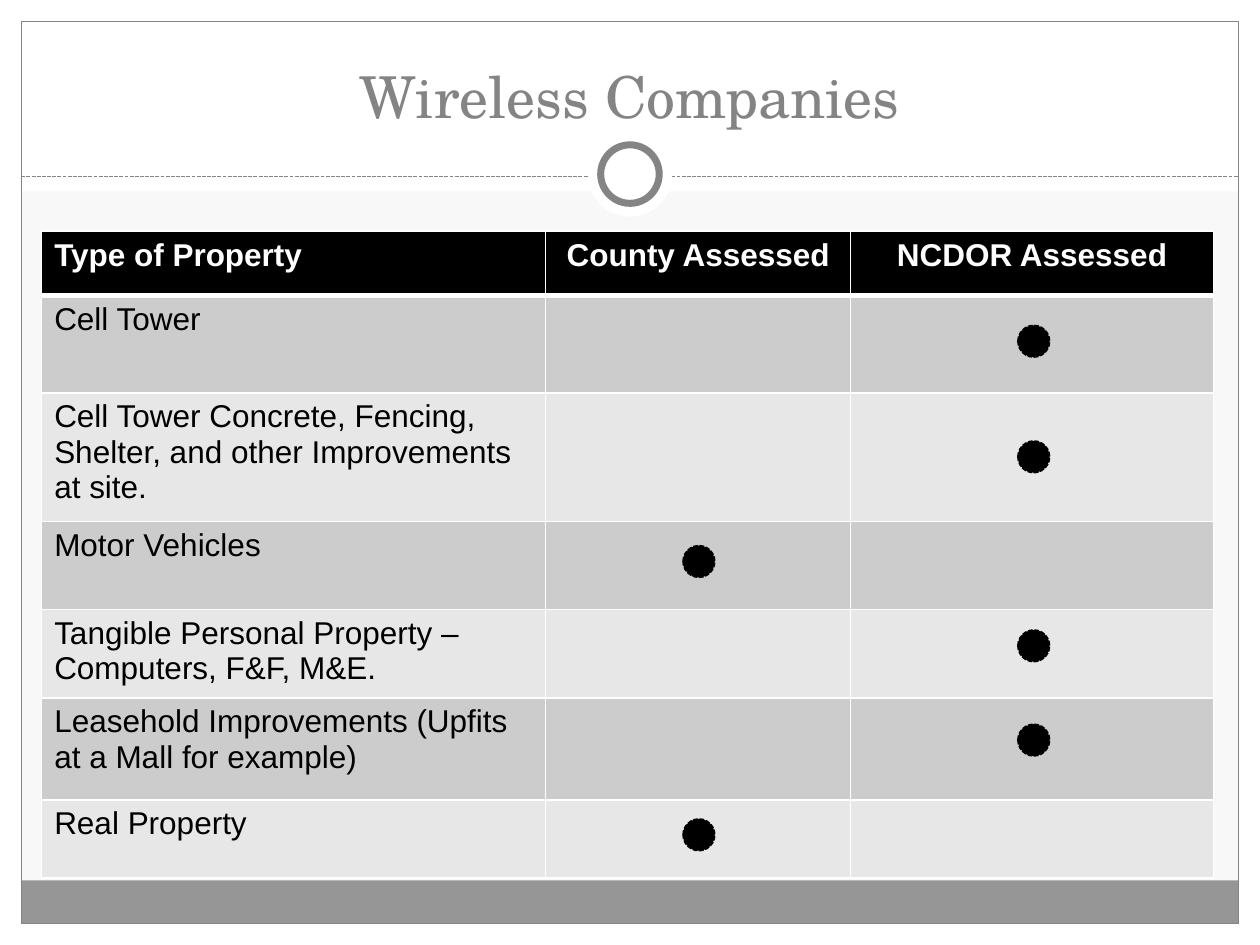
"""Builds the slide on who assesses the property of wireless companies."""
from dataclasses import dataclass

from lxml import etree
from pptx import Presentation
from pptx import util as u
from pptx.dml.color import RGBColor
from pptx.enum import dml, shapes, text
from pptx.oxml.ns import qn


@dataclass(frozen=True)
class Theme:
    back: str = "F8F8F8"
    white: str = "FFFFFF"
    black: str = "000000"
    grey: str = "848484"
    footer: str = "969696"
    bands: tuple = ("CCCCCC", "E7E7E7")
    title_font: str = "TeX Gyre Schola"
    body_font: str = "Arial"
    title_size: int = 33
    body_size: int = 18


class Deck:
    def __init__(self, prs, theme):
        self.theme = theme
        self.s = prs.slides.add_slide(prs.slide_layouts[6])
        fill = self.s.background.fill
        fill.solid()
        fill.fore_color.rgb = RGBColor.from_string(theme.back)

    def style_line(self, line, color, width, dash=None):
        line.color.rgb = RGBColor.from_string(color)
        line.width = u.Pt(width)
        if dash:
            line.dash_style = dash

    def style_text(self, p, font, size, color, bold=False, align=None):
        p.font.name, p.font.size, p.font.bold = font, u.Pt(size), bold
        p.font.color.rgb = RGBColor.from_string(color)
        p.alignment = align

    def shape(self, kind, box, fill=None, line=None, width=0.75, dash=None):
        sp = self.s.shapes.add_shape(kind, *map(u.Cm, box))
        sp.shadow.inherit = False
        if fill:
            sp.fill.solid()
            sp.fill.fore_color.rgb = RGBColor.from_string(fill)
        else:
            sp.fill.background()
        if line:
            self.style_line(sp.line, line, width, dash)
        else:
            sp.line.fill.background()

    def rule(self, x1, x2, y):
        cn = self.s.shapes.add_connector(
            shapes.MSO_CONNECTOR.STRAIGHT, *map(u.Cm, (x1, y, x2, y)))
        self.style_line(cn.line, self.theme.grey, 0.75, dml.MSO_LINE.SQUARE_DOT)
        etree.SubElement(cn._element.spPr, qn("a:effectLst"))

    def title(self, words, box):
        tf = self.s.shapes.add_textbox(*map(u.Cm, box)).text_frame
        tf.word_wrap = True
        tf.vertical_anchor = text.MSO_ANCHOR.BOTTOM
        p = tf.paragraphs[0]
        p.text = words
        t = self.theme
        self.style_text(p, t.title_font, t.title_size, t.grey, align=text.PP_ALIGN.CENTER)

    def cell_borders(self, cell, bottom):
        pr = cell._tc.get_or_add_tcPr()
        for i, (side, width) in enumerate(zip("LRTB", (1, 1, 1, bottom))):
            ln = etree.Element(qn(f"a:ln{side}"), w=str(u.Pt(width)))
            solid = etree.SubElement(ln, qn("a:solidFill"))
            etree.SubElement(solid, qn("a:srgbClr"), val=self.theme.white)
            pr.insert(i, ln)

    def table(self, left, top, widths, heights, rows):
        t = self.theme
        box = (left, top, sum(widths), sum(heights))
        tbl = self.s.shapes.add_table(len(rows), len(widths), *map(u.Cm, box)).table
        for col, width in zip(tbl.columns, widths):
            col.width = u.Cm(width)
        for i, (row, height) in enumerate(zip(rows, heights)):
            tbl.rows[i].height = u.Cm(height)
            head = i == 0
            for j, words in enumerate(row):
                cell = tbl.cell(i, j)
                cell.fill.solid()
                cell.fill.fore_color.rgb = RGBColor.from_string(
                    t.black if head else t.bands[(i - 1) % 2])
                p = cell.text_frame.paragraphs[0]
                p.text = words
                self.style_text(p, t.body_font, t.body_size, t.white if head else t.black,
                                head, text.PP_ALIGN.CENTER if j else text.PP_ALIGN.LEFT)
                self.cell_borders(cell, 3 if head else 1)

    def dot(self, x, y):
        black = self.theme.black
        self.shape(shapes.MSO_SHAPE.FLOWCHART_CONNECTOR, (x, y, 0.64, 0.64),
                   black, black, 0.9, dml.MSO_LINE.SQUARE_DOT)


HEADER = ("Type of Property", "County Assessed", "NCDOR Assessed")
COUNTY_X, STATE_X = 13.77, 20.52
PROPERTIES = (
    ("Cell Tower", 1.96, STATE_X, 6.56),
    ("Cell Tower Concrete, Fencing, Shelter, and other Improvements at site.",
     2.59, STATE_X, 8.89),
    ("Motor Vehicles", 1.78, COUNTY_X, 11),
    ("Tangible Personal Property – Computers, F&F, M&E.", 1.65, STATE_X, 12.7),
    ("Leasehold Improvements (Upfits at a Mall for example)", 2.06, STATE_X, 14.6),
    ("Real Property", 1.57, COUNTY_X, 16.51),
)


def main():
    prs = Presentation()
    width, height, margin = 25.4, 19.05, 0.43
    prs.slide_width, prs.slide_height = u.Cm(width), u.Cm(height)
    theme = Theme()
    deck = Deck(prs, theme)
    rect, oval = shapes.MSO_SHAPE.RECTANGLE, shapes.MSO_SHAPE.OVAL
    inner = width - 2 * margin

    for box in ((0, height - margin, width, margin), (0, 0, width, 3.86),
                (0, 0, margin, height), (width - margin, 0, margin, height)):
        deck.shape(rect, box, theme.white)
    deck.shape(rect, (margin, 17.75, inner, 0.87), theme.footer)
    deck.shape(rect, (margin, margin, inner, height - 2 * margin), line=theme.grey)
    deck.rule(margin, width - margin, 3.56)
    deck.shape(oval, (11.85, 2.67, 1.7, 1.7), theme.white)
    deck.shape(oval, (12.11, 2.92, 1.18, 1.18), theme.white, theme.grey, 4)

    deck.title("Wireless Companies", (0.84, 0.64, 23.7, 2.11))
    deck.table(0.84, 4.66, (10.16, 6.15, 7.31), [1.3] + [p[1] for p in PROPERTIES],
               [HEADER] + [(p[0], "", "") for p in PROPERTIES])
    for _, _, x, y in PROPERTIES:
        deck.dot(x, y)
    prs.save("out.pptx")


if __name__ == "__main__":
    main()
